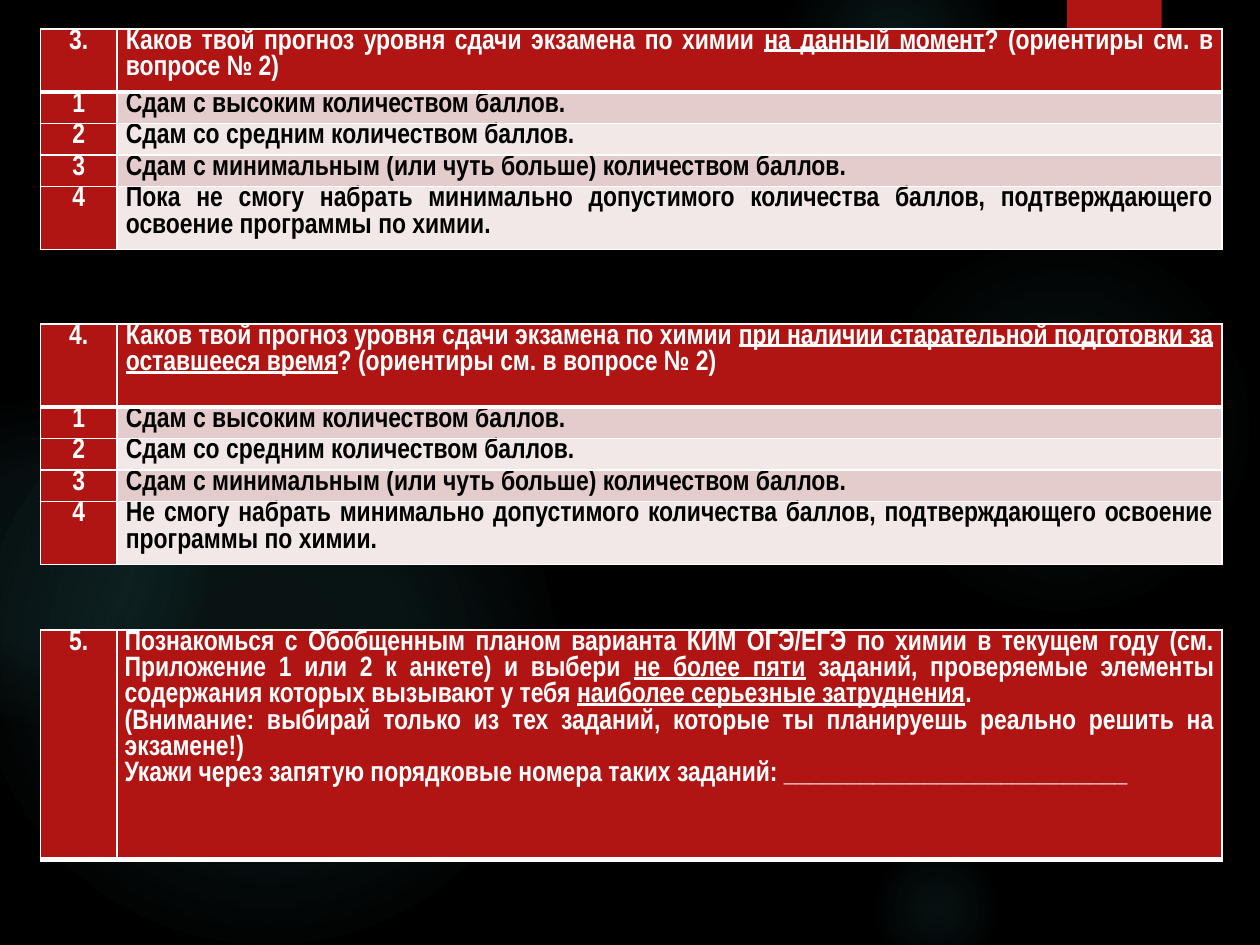
from dataclasses import dataclass

from lxml.etree import SubElement
from pptx import Presentation
from pptx.dml.color import RGBColor
from pptx.enum.shapes import MSO_SHAPE
from pptx.enum.text import PP_ALIGN
from pptx.oxml import parse_xml
from pptx.oxml.ns import nsdecls, qn
from pptx.util import Inches, Pt


@dataclass(frozen=True)
class Theme:
    back: str = "000000"
    red: str = "B01513"
    glow: str = "50B9C1"
    light: str = "FFFFFF"
    dark: str = "000000"
    bands: tuple[str, str] = ("E4CCCC", "F2E8E7")
    font: str = "Arial Narrow"
    size: int = 16
    thin: int = 1
    thick: int = 3


@dataclass(frozen=True)
class Glow:
    left: float
    top: float
    size: float
    stops: tuple[tuple[int, int], ...]


@dataclass(frozen=True)
class Survey:
    top: float
    number: str
    question: tuple[str, ...]
    heights: tuple[float, ...]
    answers: tuple[str, ...] = ()
    inset: float = 0.07


THEME = Theme()
LEFT = 0.32
COLS = (0.61, 8.77)
ROW = 0.25

GLOWS = (
    Glow(6.89, 1.83, 3.08, ((0, 7), (36, 6), (69, 0))),
    Glow(6.22, -0.5, 1.75, ((0, 14), (36, 7), (73, 0))),
    Glow(6.89, 6.67, 1.08, ((0, 9), (36, 5), (66, 0))),
    Glow(-0.17, 2.92, 4.58, ((0, 11), (36, 10), (75, 0))),
    Glow(-0.92, 3.17, 2.58, ((0, 8), (36, 8), (72, 0))),
)

GRADES = (
    "Сдам с высоким количеством баллов.",
    "Сдам со средним количеством баллов.",
    "Сдам с минимальным (или чуть больше) количеством баллов.",
)

SURVEYS = (
    Survey(
        0.23, "3.",
        ("Каков твой прогноз уровня сдачи экзамена по химии *на данный момент*? "
         "(ориентиры см. в вопросе № 2)",),
        (2 * ROW, ROW, ROW, ROW, 2 * ROW),
        GRADES + ("Пока не смогу набрать минимально допустимого количества баллов, "
                  "подтверждающего освоение программы по химии.",),
    ),
    Survey(
        2.57, "4.",
        ("Каков твой прогноз уровня сдачи экзамена по химии *при наличии старательной "
         "подготовки за оставшееся время*? (ориентиры см. в вопросе № 2)",),
        (0.66, ROW, ROW, ROW, 2 * ROW),
        GRADES + ("Не смогу набрать минимально допустимого количества баллов, "
                  "подтверждающего освоение программы по химии.",),
    ),
    Survey(
        5, "5.",
        ("Познакомься с Обобщенным планом варианта КИМ ОГЭ/ЕГЭ по химии в текущем году "
         "(см. Приложение 1 или 2 к анкете) и выбери *не более пяти* заданий, проверяемые "
         "элементы содержания которых вызывают у тебя *наиболее серьезные затруднения*.",
         "(Внимание: выбирай только из тех заданий, которые ты планируешь реально решить "
         "на экзамене!)",
         "Укажи через запятую порядковые номера таких заданий: ___________________________"),
        (1.82,),
        inset=0.06,
    ),
)


def color(code: str) -> RGBColor:
    return RGBColor.from_string(code)


def add_glow(slide, glow: Glow) -> None:
    side = Inches(glow.size)
    shape = slide.shapes.add_shape(
        MSO_SHAPE.OVAL, Inches(glow.left), Inches(glow.top), side, side)
    shape.shadow.inherit = False
    shape.line.fill.background()
    stops = "".join(
        f'<a:gs pos="{spot * 1000}"><a:srgbClr val="{THEME.glow}">'
        f'<a:alpha val="{alpha * 1000}"/></a:srgbClr></a:gs>'
        for spot, alpha in glow.stops)
    fill = parse_xml(
        f'<a:gradFill {nsdecls("a")}><a:gsLst>{stops}</a:gsLst><a:path path="circle">'
        '<a:fillToRect l="50000" t="50000" r="50000" b="50000"/></a:path></a:gradFill>')
    shape._element.spPr.find(qn("a:prstGeom")).addnext(fill)


def add_tab(slide) -> None:
    tab = slide.shapes.add_shape(
        MSO_SHAPE.RECTANGLE, Inches(8.47), 0, Inches(0.75), Inches(1.2))
    tab.shadow.inherit = False
    tab.fill.solid()
    tab.fill.fore_color.rgb = color(THEME.red)
    tab.line.fill.background()


def set_edges(cell, top: int, base: int) -> None:
    props = cell._tc.get_or_add_tcPr()
    for side, width in zip("LRTB", (THEME.thin, THEME.thin, top, base)):
        edge = SubElement(props, qn(f"a:ln{side}"), w=str(Pt(width)))
        SubElement(SubElement(edge, qn("a:solidFill")), qn("a:srgbClr"), val=THEME.light)


def fill_cell(cell, lines: tuple[str, ...], back: str, ink: str,
              align: PP_ALIGN, inset: float) -> None:
    cell.fill.solid()
    cell.fill.fore_color.rgb = color(back)
    cell.margin_left = cell.margin_right = Inches(inset)
    cell.margin_top = cell.margin_bottom = 0
    frame = cell.text_frame
    for index, line in enumerate(lines):
        para = frame.add_paragraph() if index else frame.paragraphs[0]
        para.alignment = align
        para.line_spacing = 1.0
        font = para.font
        font.name, font.size, font.bold = THEME.font, Pt(THEME.size), True
        font.color.rgb = color(ink)
        for place, part in enumerate(line.split("*")):
            run = para.add_run()
            run.text = part
            if place % 2:
                run.font.underline = True


def add_survey(slide, survey: Survey) -> None:
    rows = [(survey.number, survey.question)]
    rows += [(str(num), (text,)) for num, text in enumerate(survey.answers, 1)]
    table = slide.shapes.add_table(
        len(rows), len(COLS), Inches(LEFT), Inches(survey.top),
        Inches(sum(COLS)), Inches(sum(survey.heights))).table
    for column, width in zip(table.columns, COLS):
        column.width = Inches(width)
    for index, (label, lines) in enumerate(rows):
        table.rows[index].height = Inches(survey.heights[index])
        back = THEME.bands[(index - 1) % 2] if index else THEME.red
        ink = THEME.dark if index else THEME.light
        top = THEME.thick if index == 1 else THEME.thin
        base = THEME.thin if index else THEME.thick
        left, right = table.cell(index, 0), table.cell(index, 1)
        for cell in (left, right):
            set_edges(cell, top, base)
        fill_cell(left, (label,), THEME.red, THEME.light, PP_ALIGN.CENTER, survey.inset)
        fill_cell(right, lines, back, ink, PP_ALIGN.JUSTIFY, survey.inset)


def main() -> None:
    deck = Presentation()
    deck.slide_width, deck.slide_height = Inches(10), Inches(7.5)
    slide = deck.slides.add_slide(deck.slide_layouts[6])
    slide.background.fill.solid()
    slide.background.fill.fore_color.rgb = color(THEME.back)
    for glow in GLOWS:
        add_glow(slide, glow)
    add_tab(slide)
    for survey in SURVEYS:
        add_survey(slide, survey)
    deck.save("out.pptx")


if __name__ == "__main__":
    main()
